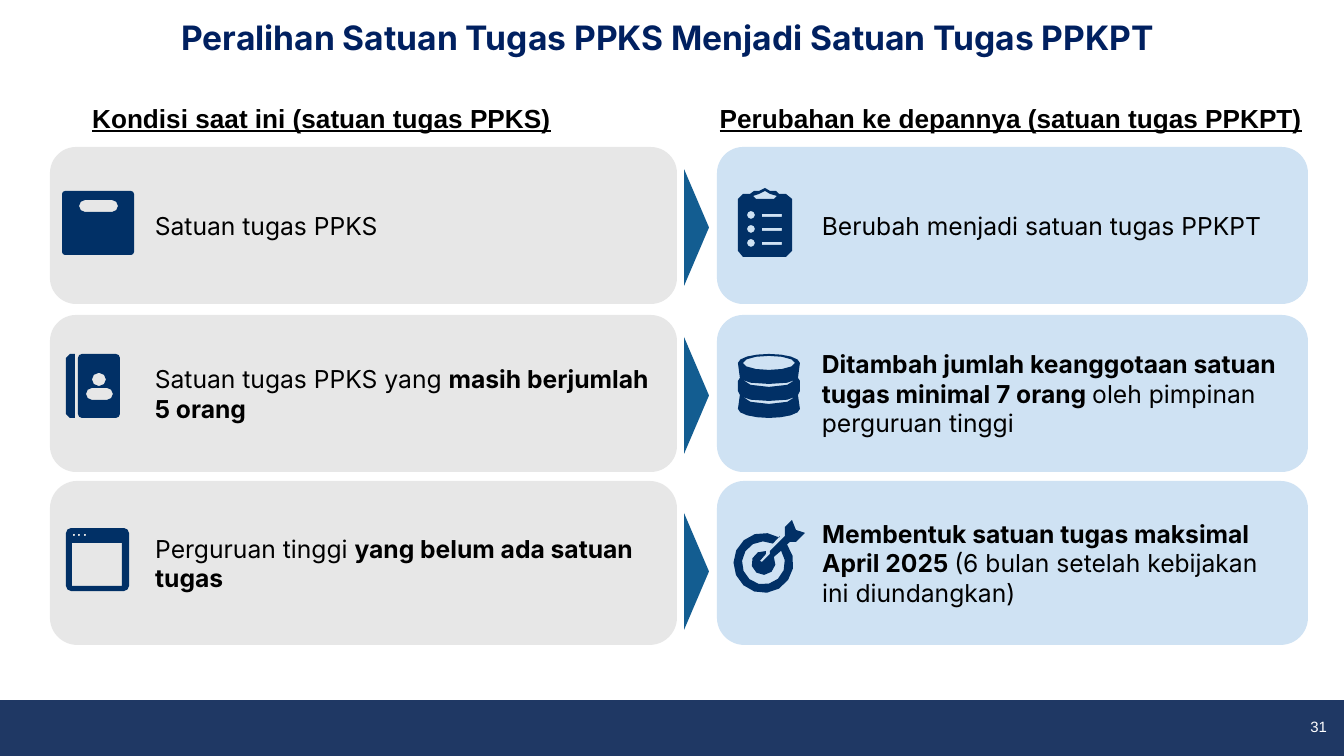
from math import cos, sin, radians
from lxml.etree import SubElement
from pptx import Presentation
from pptx.dml.color import RGBColor
from pptx.enum.shapes import MSO_SHAPE as Kind
from pptx.enum.text import MSO_ANCHOR as Anchor, PP_ALIGN as Align
from pptx.oxml.ns import qn
from pptx.util import Pt

# Content
TITLE = "Peralihan Satuan Tugas PPKS Menjadi Satuan Tugas PPKPT "
HEADS = [
    ("Kondisi saat ini (satuan tugas PPKS)", 34, 575),
    ("Perubahan ke depannya (satuan tugas PPKPT)", 664, 694),
]
# Each row: top, height, arrow centre, left runs, right runs; a run is (text, bold)
ROWS = [
    (147, 157, 227,
     [("Satuan tugas PPKS", False)],
     [("Berubah menjadi satuan tugas PPKPT", False)]),
    (315, 157, 395,
     [("Satuan tugas PPKS yang ", False), ("masih berjumlah 5 orang", True)],
     [("Ditambah jumlah keanggotaan satuan tugas minimal 7 orang ", True),
      ("oleh pimpinan perguruan tinggi", False)]),
    (481, 164, 571,
     [("Perguruan tinggi ", False), ("yang belum ada satuan tugas", True)],
     [("Membentuk satuan tugas maksimal April 2025 ", True),
      ("(6 bulan setelah kebijakan ini diundangkan)", False)]),
]
PAGE = "31"
COLS = [(50, 627, "D8D8D8", 60), (717, 591, "CFE2F3", 100)]
NAVY, ICON, ARROW = "1F3864", "013066", "135D91"
SCALE = 914400 / 134.4

deck = Presentation()


def px(n):
    return round(n * SCALE)


deck.slide_width, deck.slide_height = px(1344), px(756)
slide = deck.slides.add_slide(deck.slide_layouts[6])
shapes = slide.shapes


def color(hex_):
    return RGBColor.from_string(hex_)


def paint(shape, fill, alpha=100):
    shape.shadow.inherit = False
    shape.line.fill.background()
    shape.fill.solid()
    shape.fill.fore_color.rgb = color(fill)
    if alpha < 100:
        tint = shape.fill._xPr.find(".//" + qn("a:srgbClr"))
        SubElement(tint, qn("a:alpha"), val=str(alpha * 1000))


def block(kind, x, y, w, h, fill, alpha=100):
    shape = shapes.add_shape(kind, px(x), px(y), px(w), px(h))
    paint(shape, fill, alpha)
    return shape


def style(para, name, size, tone, bold=None, align=Align.LEFT):
    para.alignment = align
    font = para.font
    font.name, font.size, font.bold = name, Pt(size), bold
    font.color.rgb = color(tone)


def label(text, x, y, w, h, *look, pad=(13, 7)):
    frame = shapes.add_textbox(px(x), px(y), px(w), px(h)).text_frame
    frame.word_wrap = True
    frame.margin_left = frame.margin_right = px(pad[0])
    frame.margin_top = frame.margin_bottom = px(pad[1])
    para = frame.paragraphs[0]
    para.text = text
    style(para, *look)
    return frame


# Outlines for icons, as lists of points in px
def arc(cx, cy, rx, ry, start, end, steps):
    turns = [radians(start + (end - start) * i / steps) for i in range(steps + 1)]
    return [(round(cx + rx * cos(t), 1), round(cy + ry * sin(t), 1)) for t in turns]


def box(x, y, w, h, r=0):
    if not r:
        return [(x, y), (x + w, y), (x + w, y + h), (x, y + h)]
    mids = [(x + w - r, y + h - r), (x + r, y + h - r), (x + r, y + r), (x + w - r, y + r)]
    spots = [p for i, (cx, cy) in enumerate(mids)
             for p in arc(cx, cy, r, r, 90 * i, 90 * i + 90, 2)]
    return list(dict.fromkeys(spots))


def icon(*rings):
    pen = None
    for ring in rings:
        (x, y), *rest = [(px(a), px(b)) for a, b in ring]
        if pen is None:
            pen = shapes.build_freeform(x, y, scale=1.0)
        else:
            pen.move_to(x, y)
        pen.add_line_segments(rest, close=True)
    paint(pen.convert_to_shape(), ICON)


# Footer and page number
bar = block(Kind.RECTANGLE, 0, 701, 1344, 55, NAVY)
bar.line.color.rgb = color(NAVY)
bar.line.width = Pt(1)
page = label(PAGE, 1249, 713, 87, 27, "Arial", 8, "FFFFFF", None, Align.RIGHT, pad=(9, 5))
page.vertical_anchor = Anchor.MIDDLE

# Title and column heads
title = label(TITLE, 0, 8, 1344, 63, "Inter", 18, "002060", True, Align.CENTER, pad=(13, 13))
title.paragraphs[0].line_spacing = 0.9
for text, x, w in HEADS:
    head = label(text, x, 95, w, 46, "Arial", 14, "000000", True, Align.CENTER)
    head.paragraphs[0].font.underline = True

# Cards and arrows
for top, high, mid, *sides in ROWS:
    for (x, w, fill, alpha), runs in zip(COLS, sides):
        card = block(Kind.ROUNDED_RECTANGLE, x, top, w, high, fill, alpha)
        frame = card.text_frame
        frame.word_wrap = True
        frame.vertical_anchor = Anchor.MIDDLE
        para = frame.paragraphs[0]
        para._p.get_or_add_pPr().set("marL", str(px(84)))
        style(para, "Inter", 13.2, "000000")
        for text, bold in runs:
            run = para.add_run()
            run.text, run.font.bold = text, bold
    tip = block(Kind.ISOSCELES_TRIANGLE, 638, mid - 12, 117, 25, ARROW)
    tip.rotation = 90

# Archive box
icon(box(62, 191, 72, 64, 3), box(79, 200, 39, 12, 6))

# Clipboard
sheet = [(779, 194), (776, 191), (770, 191), (765, 188), (759, 191), (754, 191),
         (750, 194), (743, 194), (738, 199), (738, 251), (743, 257), (786, 257),
         (792, 251), (792, 199), (786, 194)]
clip = [(753, 196), (759, 194), (765, 191), (770, 194), (777, 196),
        (774, 199), (756, 199)]
marks = [ring for y in (211, 225, 239)
         for ring in (box(747, y, 8, 8, 4), box(762, y + 3, 20, 3))]
icon(sheet, clip, *marks)

# Contact book: spine, then cover
icon([(75, 354), (70, 354), (66, 358), (66, 414), (70, 418), (75, 418)])
icon(box(78, 354, 42, 64, 4), box(92, 373, 14, 13, 6.5), box(86, 388, 27, 12, 6))

# Stack of discs
edge = [(798, 378), (800, 381), (800, 391), (798, 395)]
back = [(1538 - x, y) for x, y in reversed(edge)]
gaps = [arc(769, y, 26, 4, 0, 180, 4) + arc(769, y, 26, 7, 180, 0, 4) for y in (380, 397)]
icon(arc(769, 363, 31, 9, 180, 360, 8) + edge + arc(769, 409, 31, 9, 0, 180, 8) + back,
     arc(769, 363, 26, 7, 0, 330, 11), *gaps)

# Window
icon(box(66, 528, 63, 63, 5), box(72, 543, 50, 43),
     *[box(x, 534, 2, 2) for x in (73, 78, 84)])

# Target with arrow, one outline
tail = [(805, 533), (796, 530), (792, 520), (785, 527), (785, 536), (770, 551),
        (770, 554), (762, 562), (760, 561), (766, 554)]
icon(tail + arc(763.5, 563, 12, 12, 281, -30, 8) + [(781, 551)]
     + arc(763.5, 563, 21.5, 21.5, -35, 296, 12) + [(780, 536)]
     + arc(763.5, 563, 30, 30, 302, -38, 14) + [(790, 542), (796, 542)])

deck.save("out.pptx")
